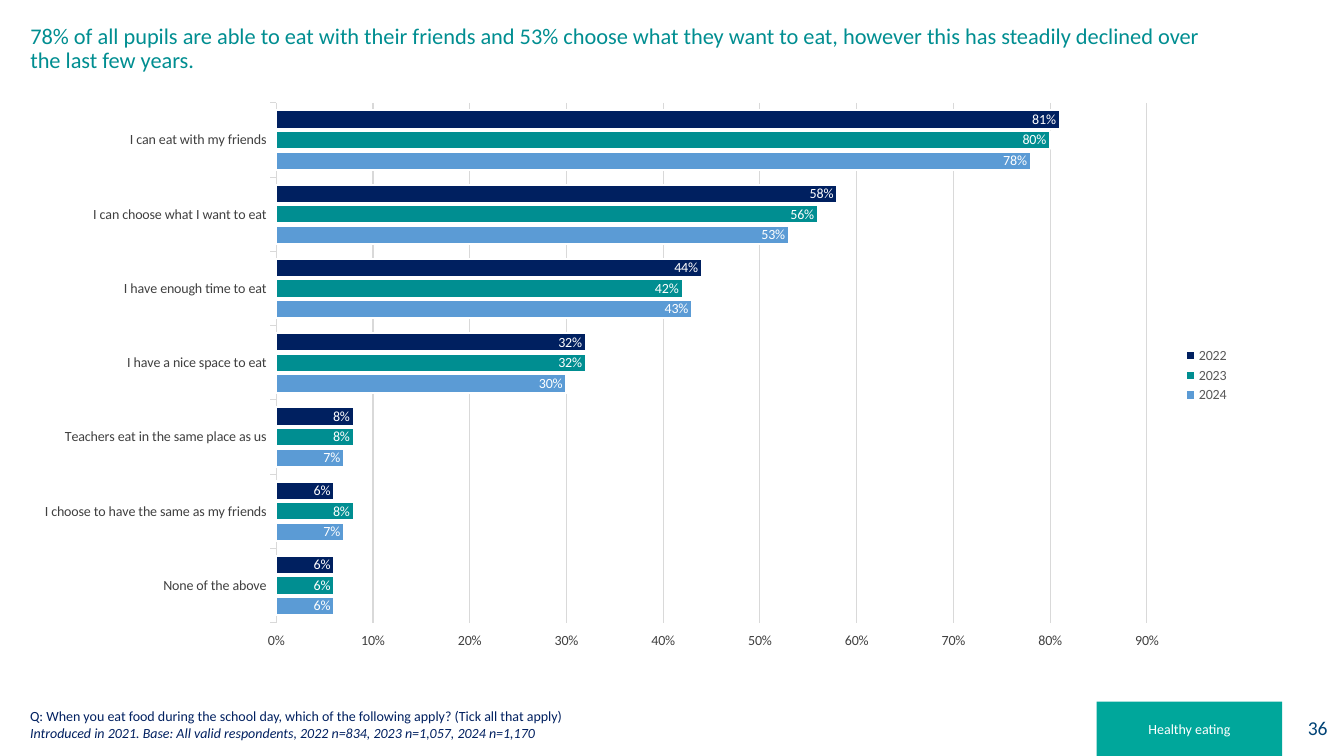
from dataclasses import dataclass

from lxml.etree import SubElement
from pptx import Presentation
from pptx.chart.data import CategoryChartData
from pptx.dml.color import RGBColor
from pptx.enum.chart import XL_CHART_TYPE, XL_LABEL_POSITION, XL_LEGEND_POSITION, XL_TICK_MARK
from pptx.enum.shapes import MSO_SHAPE
from pptx.enum.text import MSO_ANCHOR, PP_ALIGN
from pptx.oxml.ns import qn
from pptx.util import Cm, Pt

HEADLINE = (
    "78% of all pupils are able to eat with their friends and 53% choose what they "
    "want to eat, however this has steadily declined over the last few years."
)
QUESTION = "Q: When you eat food during the school day, which of the following apply? (Tick all that apply)"
BASE = "Introduced in 2021. Base: All valid respondents, 2022 n=834, 2023 n=1,057, 2024 n=1,170"
SECTION = "Healthy eating"
PAGE = "36"
YEARS = ("2024", "2023", "2022")
ANSWERS = {
    "None of the above": (0.06, 0.06, 0.06),
    "I choose to have the same as my friends": (0.07, 0.08, 0.06),
    "Teachers eat in the same place as us": (0.07, 0.08, 0.08),
    "I have a nice space to eat": (0.3, 0.32, 0.32),
    "I have enough time to eat": (0.43, 0.42, 0.44),
    "I can choose what I want to eat": (0.53, 0.56, 0.58),
    "I can eat with my friends": (0.78, 0.8, 0.81),
}
PLOT_AREA = {"x": 0.21, "y": 0.02, "w": 0.714, "h": 0.916}
MARGIN = Cm(0.51)


@dataclass(frozen=True)
class Theme:
    font: str = "Calibri"
    teal: str = "008E91"
    navy: str = "002060"
    blue: str = "5B9BD5"
    badge: str = "00A79B"
    page: str = "004376"
    white: str = "FFFFFF"
    grid: str = "D9D9D9"
    axis: str = "404040"
    legend: str = "595959"
    headline_size: int = 16
    page_size: int = 14
    small_size: int = 10


THEME = Theme()
YEAR_COLOURS = (THEME.blue, THEME.teal, THEME.navy)


def style(font, colour, size=THEME.small_size):
    font.name, font.size = THEME.font, Pt(size)
    font.color.rgb = RGBColor.from_string(colour)


def stroke(line, colour, width):
    line.color.rgb = RGBColor.from_string(colour)
    line.width = Pt(width)


def add_block(slide, box, fill, label, align, colour, size):
    block = slide.shapes.add_shape(MSO_SHAPE.RECTANGLE, *box)
    block.shadow.inherit = False
    block.fill.solid()
    block.fill.fore_color.rgb = RGBColor.from_string(fill)
    block.line.fill.background()
    block.text_frame.text = label
    block.text_frame.vertical_anchor = MSO_ANCHOR.MIDDLE
    paragraph = block.text_frame.paragraphs[0]
    paragraph.alignment = align
    style(paragraph.font, colour, size)


def add_headline(slide):
    title = slide.shapes.title
    title.left, title.top, title.width, title.height = MARGIN, MARGIN, Cm(30.28), Cm(2.49)
    title.text_frame.text = HEADLINE
    title.text_frame.word_wrap = True
    title.text_frame.vertical_anchor = MSO_ANCHOR.TOP
    paragraph = title.text_frame.paragraphs[0]
    paragraph.alignment = PP_ALIGN.LEFT
    paragraph.line_spacing = 0.9
    style(paragraph.font, THEME.teal, THEME.headline_size)


def add_footnote(slide):
    footnote = slide.shapes.add_textbox(MARGIN, Cm(17.68), Cm(14.68), Cm(1.12)).text_frame
    footnote.word_wrap = True
    footnote.vertical_anchor = MSO_ANCHOR.BOTTOM
    footnote.text = f"{QUESTION}\n{BASE}"
    for paragraph in footnote.paragraphs:
        style(paragraph.font, THEME.navy)
    footnote.paragraphs[1].font.italic = True


def place_plot(chart):
    plot_area = chart.plots[0]._element.getparent()
    for old in plot_area.findall(qn("c:layout")):
        plot_area.remove(old)
    layout = SubElement(plot_area, qn("c:layout"))
    plot_area.insert(0, layout)
    manual = SubElement(layout, qn("c:manualLayout"))
    settings = {"layoutTarget": "inner", "xMode": "edge", "yMode": "edge", **PLOT_AREA}
    for tag, value in settings.items():
        SubElement(manual, qn(f"c:{tag}")).set("val", str(value))


def add_answers_chart(slide):
    answers = CategoryChartData(number_format="0%")
    answers.categories = list(ANSWERS)
    for year, shares in zip(YEARS, zip(*ANSWERS.values())):
        answers.add_series(year, shares)
    chart = slide.shapes.add_chart(
        XL_CHART_TYPE.BAR_CLUSTERED, MARGIN, Cm(2.31), Cm(30.73), Cm(14.3), answers
    ).chart
    style(chart.font, THEME.axis)
    chart.has_title = False
    chart.has_legend = True
    chart.legend.position = XL_LEGEND_POSITION.RIGHT
    chart.legend.include_in_layout = False
    style(chart.legend.font, THEME.legend)
    place_plot(chart)

    bars = chart.plots[0]
    bars.gap_width, bars.overlap, bars.vary_by_categories = 80, -12, False
    for series, colour in zip(bars.series, YEAR_COLOURS):
        series.format.fill.solid()
        series.format.fill.fore_color.rgb = RGBColor.from_string(colour)
        stroke(series.format.line, THEME.white, 1.5)
        labels = series.data_labels
        labels.show_value = True
        labels.position = XL_LABEL_POSITION.INSIDE_END
        labels.number_format, labels.number_format_is_linked = "0%", False
        style(labels.font, THEME.white)

    for axis in (chart.category_axis, chart.value_axis):
        axis.major_tick_mark = XL_TICK_MARK.OUTSIDE
        axis.minor_tick_mark = XL_TICK_MARK.NONE
        style(axis.tick_labels.font, THEME.axis)
    stroke(chart.category_axis.format.line, THEME.grid, 0.75)
    scale = chart.value_axis
    scale.minimum_scale, scale.maximum_scale, scale.major_unit = 0, 0.9, 0.1
    scale.tick_labels.number_format = "0%"
    scale.tick_labels.number_format_is_linked = False
    scale.format.line.fill.background()
    scale.has_major_gridlines = True
    stroke(scale.major_gridlines.format.line, THEME.grid, 0.75)


def main():
    """Build the healthy eating survey slide."""
    deck = Presentation()
    deck.slide_width, deck.slide_height = Cm(33.87), Cm(19.05)
    slide = deck.slides.add_slide(deck.slide_layouts[5])
    page_box = (Cm(32.21), Cm(17.65), Cm(1.5), Cm(1.37))
    section_box = (Cm(27.64), Cm(17.68), Cm(4.67), Cm(1.37))
    add_block(slide, page_box, THEME.white, PAGE, PP_ALIGN.RIGHT, THEME.page, THEME.page_size)
    add_headline(slide)
    add_footnote(slide)
    add_block(slide, section_box, THEME.badge, SECTION, PP_ALIGN.CENTER, THEME.white, THEME.small_size)
    add_answers_chart(slide)
    deck.save("out.pptx")


if __name__ == "__main__":
    main()
